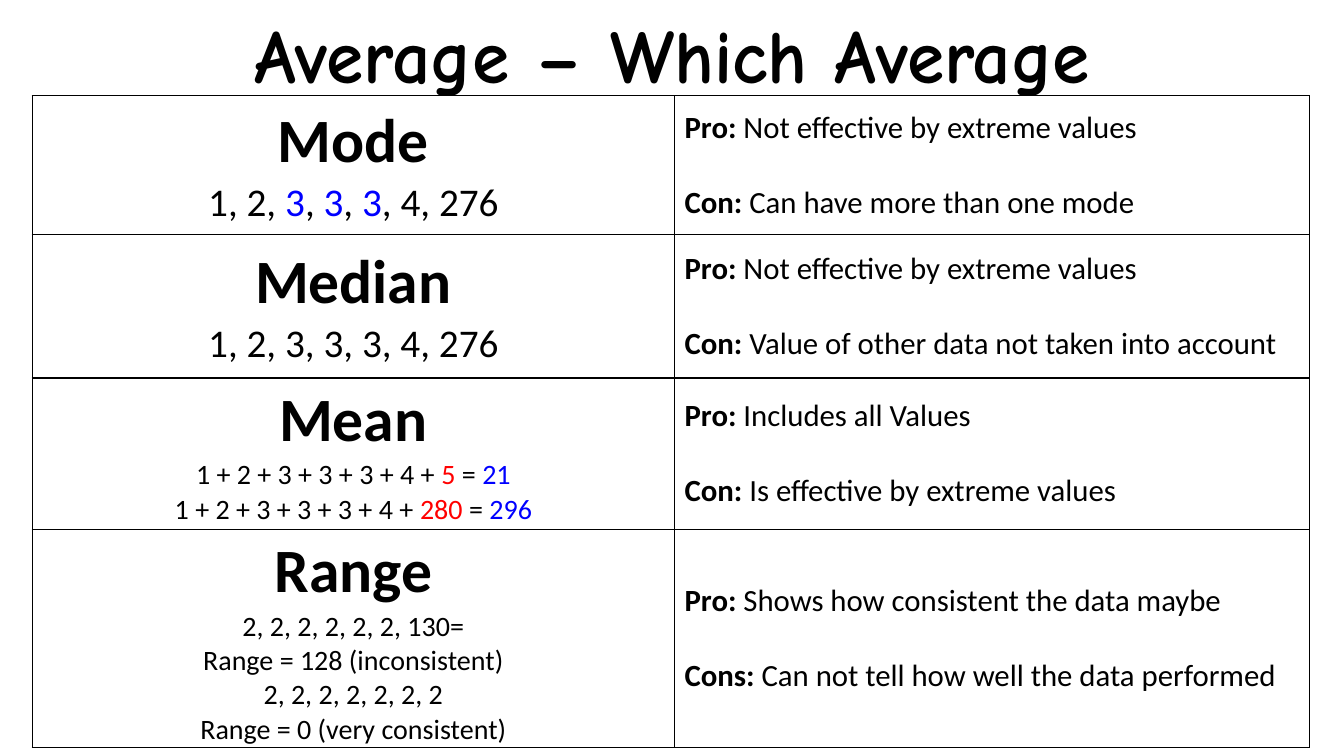
from lxml.etree import SubElement
from pptx import Presentation
from pptx.dml.color import RGBColor
from pptx.enum.text import MSO_ANCHOR, MSO_AUTO_SIZE, PP_ALIGN
from pptx.oxml.ns import qn
from pptx.util import Inches, Pt

BLACK = RGBColor(0, 0, 0)
WHITE = RGBColor(255, 255, 255)
BLUE = RGBColor(0, 0, 255)
RED = RGBColor(255, 0, 0)

COLUMN_WIDTHS = [6.37, 6.3]
ROW_HEIGHTS = [1.38, 1.42, 1.5, 2.16]

AVERAGES = [
    ("Mode", 28,
     [[("1, 2, ", BLACK), ("3", BLUE), (",", BLACK), (" 3", BLUE),
       (",", BLACK), (" 3", BLUE), (", 4, 276", BLACK)]],
     [("Pro: ", "Not effective by extreme values"),
      ("Con: ", "Can have more than one mode")]),
    ("Median", 28,
     [[("1, 2, 3, 3, 3, 4, 276", BLACK)]],
     [("Pro: ", "Not effective by extreme values"),
      ("Con: ", "Value of other data not taken into account")]),
    ("Mean", 20,
     [[("1 + 2 + 3 + 3 + 3 + 4 + ", BLACK), (value, RED), (" = ", BLACK), (total, BLUE)]
      for value, total in [("5", "21"), ("280", "296")]],
     [("Pro: ", "Includes all Values"),
      ("Con: ", "Is effective by extreme values")]),
    ("Range", 20,
     [[(line, BLACK)] for line in [
         "2, 2, 2, 2, 2, 2, 130=", "Range = 128 (inconsistent)",
         "2, 2, 2, 2, 2, 2, 2", "Range = 0 (very consistent)"]],
     [("Pro: ", "Shows how consistent the data maybe"),
      ("Cons: ", "Can not tell how well the data performed")]),
]


class SlideBuilder:
    title_font = "Comic Neue"
    body_font = "Calibri"

    def __init__(self, prs):
        self.s = prs.slides.add_slide(prs.slide_layouts[6])

    def style(self, p, size, font=body_font, bold=None, align=PP_ALIGN.LEFT):
        p.alignment = align
        p.font.name = font
        p.font.size = Pt(size)
        p.font.bold = bold
        p.font.color.rgb = BLACK

    def title(self, text, left, top, width, height):
        sp = self.s.shapes.add_textbox(Inches(left), Inches(top), Inches(width), Inches(height))
        tf = sp.text_frame
        tf.word_wrap = True
        tf.auto_size = MSO_AUTO_SIZE.SHAPE_TO_FIT_TEXT
        p = tf.paragraphs[0]
        p.text = text
        self.style(p, 54, self.title_font, True, PP_ALIGN.CENTER)

    def table(self, left, top, widths, heights):
        frame = self.s.shapes.add_table(
            len(heights), len(widths), Inches(left), Inches(top),
            Inches(sum(widths)), Inches(sum(heights)))
        table = frame.table
        table.first_row = False
        table.horz_banding = False
        for column, width in zip(table.columns, widths):
            column.width = Inches(width)
        for row, height in zip(table.rows, heights):
            row.height = Inches(height)
        for cell in table.iter_cells():
            self.frame_cell(cell)
        return table

    def frame_cell(self, cell):
        cell.vertical_anchor = MSO_ANCHOR.MIDDLE
        tc_pr = cell._tc.get_or_add_tcPr()
        for side in ("a:lnL", "a:lnR", "a:lnT", "a:lnB"):
            ln = SubElement(tc_pr, qn(side), w=str(Pt(1)))
            fill = SubElement(ln, qn("a:solidFill"))
            SubElement(fill, qn("a:srgbClr"), val=str(BLACK))
        cell.fill.solid()
        cell.fill.fore_color.rgb = WHITE

    def example_cell(self, cell, name, size, lines):
        tf = cell.text_frame
        p = tf.paragraphs[0]
        p.text = name
        self.style(p, 44, bold=True, align=PP_ALIGN.CENTER)
        for line in lines:
            p = tf.add_paragraph()
            self.style(p, size, align=PP_ALIGN.CENTER)
            for text, color in line:
                r = p.add_run()
                r.text = text
                r.font.size = Pt(size)
                r.font.name = self.body_font
                r.font.color.rgb = color

    def verdict_cell(self, cell, verdicts):
        tf = cell.text_frame
        for i, verdict in enumerate(verdicts):
            p = tf.add_paragraph() if i else tf.paragraphs[0]
            self.style(p, 22)
            if i:
                p.space_before = Pt(27)
            for text, bold in zip(verdict, (True, False)):
                r = p.add_run()
                r.text = text
                r.font.size = Pt(22)
                r.font.name = self.body_font
                r.font.bold = bold
                r.font.color.rgb = BLACK


def main():
    prs = Presentation()
    prs.slide_width = Inches(13.33)
    prs.slide_height = Inches(7.5)
    builder = SlideBuilder(prs)
    builder.title("Average – Which Average", 0, 0.03, 13.33, 1.01)
    table = builder.table(0.32, 0.95, COLUMN_WIDTHS, ROW_HEIGHTS)
    for row, (name, size, lines, verdicts) in enumerate(AVERAGES):
        builder.example_cell(table.cell(row, 0), name, size, lines)
        builder.verdict_cell(table.cell(row, 1), verdicts)
    prs.save("out.pptx")


if __name__ == "__main__":
    main()
